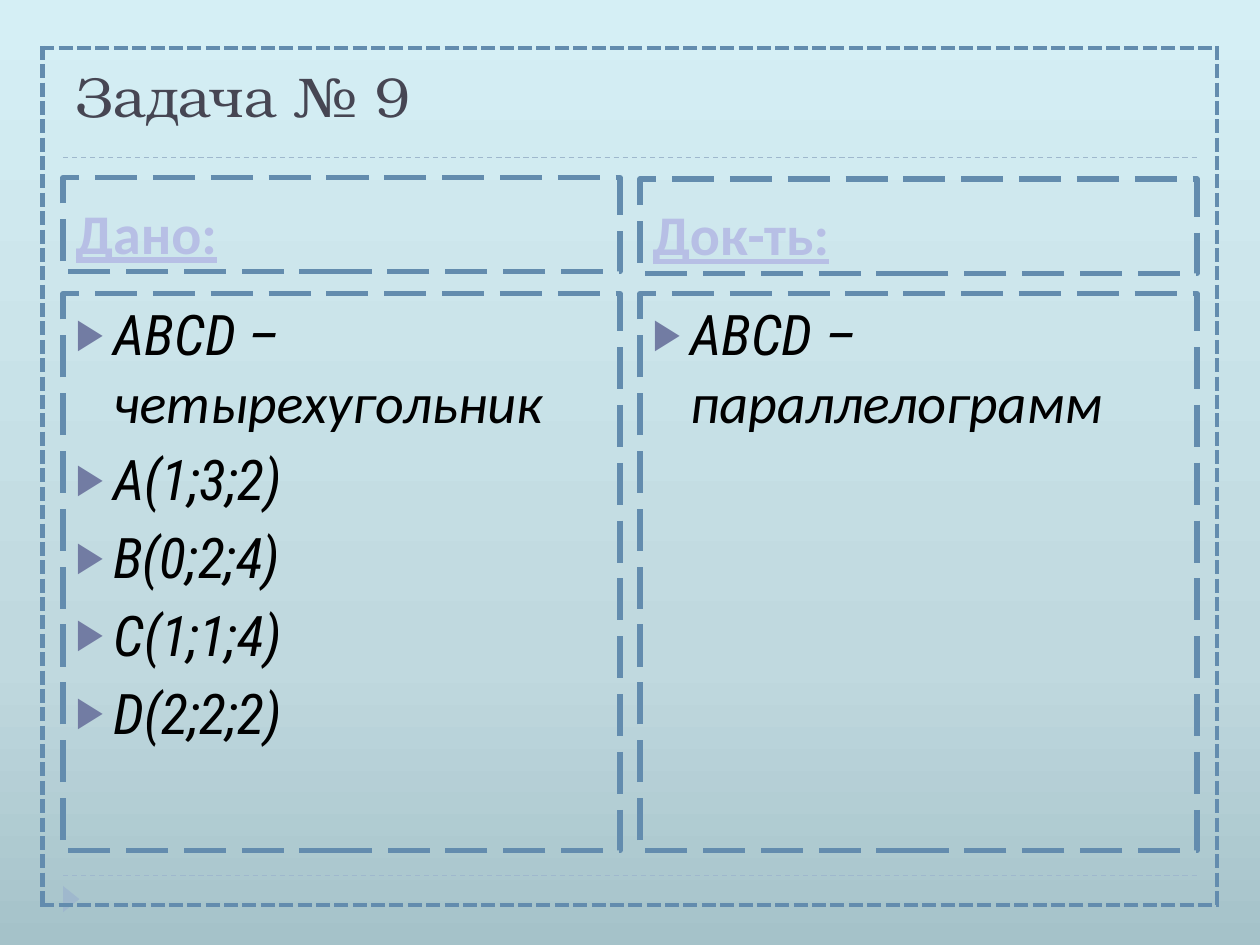
from lxml.etree import SubElement as Sub
from pptx import Presentation
from pptx.dml.color import RGBColor as RGB
from pptx.enum.dml import MSO_LINE as Dash
from pptx.enum.shapes import MSO_CONNECTOR as Conn, MSO_SHAPE as Kind
from pptx.enum.text import MSO_ANCHOR as Anchor, MSO_AUTO_SIZE as Auto, PP_ALIGN as Align
from pptx.oxml import parse_xml
from pptx.oxml.ns import nsdecls, qn
from pptx.util import Cm, Pt

BLUE = RGB(0x63, 0x8C, 0xAE)
PALE = RGB(0x9F, 0xB8, 0xCD)
DARK = RGB(0x46, 0x46, 0x53)
MIST = RGB(0xCD, 0xD2, 0xE8)
LILAC = RGB(0xB7, 0xBF, 0xE5)
NAVY = RGB(0x20, 0x2F, 0x69)
EDGE = RGB(0x6A, 0x74, 0x9D)
MARK = RGB(0x72, 0x7C, 0xA3)
BLACK = RGB(0, 0, 0)
SKY = [(0, RGB(0xA5, 0xC2, 0xC9)), (30, RGB(0xC0, 0xD9, 0xDF)),
       (100, RGB(0xD5, 0xEF, 0xF5))]
GLOW = [(0, MIST), (9, LILAC), (50, NAVY), (79, LILAC), (100, MIST)]
SERIF, SANS, SLIM = "TeX Gyre Bonum", "Calibri", "Roboto Condensed"
LEFT, WIDE, COL, STEP = 1.27, 22.86, 11.23, 11.63
GIVEN = [("ABCD – ", "четырехугольник"), ("A(1;3;2)", ""), ("B(0;2;4)", ""),
         ("C(1;1;4)", ""), ("D(2;2;2)", "")]
PROVE = [("ABCD – ", "параллелограмм")]


def blend(stops, angle):
    """Return the XML of a linear gradient fill."""
    parts = "".join(f'<a:gs pos="{pos * 1000}"><a:srgbClr val="{tint}"/></a:gs>'
                    for pos, tint in stops)
    return (f'<a:gradFill {nsdecls("a")} rotWithShape="1"><a:gsLst>{parts}</a:gsLst>'
            f'<a:lin ang="{angle * 60000}" scaled="0"/></a:gradFill>')


def paint(slide):
    """Give the slide its three-stop gradient, running upwards."""
    slide.element.cSld.insert(0, parse_xml(
        f'<p:bg {nsdecls("p", "a")}><p:bgPr>{blend(SKY, 270)}'
        '<a:effectLst/></p:bgPr></p:bg>'))


def rule(slide, left, top, width):
    """Draw a thin dashed line across the slide."""
    line = slide.shapes.add_connector(
        Conn.STRAIGHT, Cm(left), Cm(top), Cm(left + width), Cm(top))
    line.line.color.rgb = PALE
    line.line.width = Pt(0.75)
    line.line.dash_style = Dash.DASH
    Sub(line.element.spPr, qn("a:effectLst"))


def arrow(slide, left, top, width, height):
    """Place the small triangle that points right."""
    shape = slide.shapes.add_shape(
        Kind.ISOSCELES_TRIANGLE, Cm(left), Cm(top), Cm(width), Cm(height))
    shape.rotation = 90
    shape.shadow.inherit = False
    shape.fill.solid()
    shape.fill.fore_color.rgb = PALE
    shape.line.fill.background()


def frame(slide, *box):
    """Surround the content with a one-cell dashed table."""
    table = slide.shapes.add_table(1, 1, *map(Cm, box)).table
    table.first_row = table.horz_banding = False
    cell = table.cell(0, 0)
    props = cell._tc.get_or_add_tcPr()
    for side in ("lnL", "lnR", "lnT", "lnB"):
        props.append(parse_xml(
            f'<a:{side} {nsdecls("a")} w="38100"><a:solidFill><a:srgbClr val="{BLUE}"/>'
            f'</a:solidFill><a:prstDash val="dash"/></a:{side}>'))
    cell.fill.background()


def seat(slide, idx, box, anchor):
    """Move a placeholder to its box, in front, and return its text frame."""
    shape = slide.placeholders[idx]
    slide.shapes._spTree.append(shape.element)
    shape.left, shape.top, shape.width, shape.height = map(Cm, box)
    text = shape.text_frame
    text.word_wrap = True
    text.auto_size = Auto.NONE
    text.vertical_anchor = anchor
    if idx:
        shape.line.color.rgb = BLUE
        shape.line.width = Pt(3)
        shape.line.dash_style = Dash.LONG_DASH
    return text


def style(run, face, tint=None, slant=False):
    """Format one run of text."""
    font = run.font
    font.name, font.size = face, Pt(32)
    font.italic = slant
    if tint is not None:
        font.color.rgb = tint


def glow(run):
    """Make a run bold and underlined, with gradient fill and outline."""
    run.font.bold = run.font.underline = True
    props = run._r.get_or_add_rPr()
    props.insert(0, parse_xml(blend(GLOW, 90)))
    props.insert(0, parse_xml(
        f'<a:ln {nsdecls("a")} w="{Pt(0.83)}"><a:solidFill>'
        f'<a:srgbClr val="{EDGE}"/></a:solidFill></a:ln>'))


def title(slide, words, *box):
    """Set the slide title."""
    text = seat(slide, 0, box, Anchor.MIDDLE)
    text.text = words
    para = text.paragraphs[0]
    para.alignment = Align.LEFT
    style(para.runs[0], SERIF, DARK)


def head(slide, idx, words, *box):
    """Set the heading of one column."""
    text = seat(slide, idx, box, Anchor.BOTTOM)
    text.text = words
    para = text.paragraphs[0]
    para.space_before = Pt(0)
    style(para.runs[0], SANS)
    glow(para.runs[0])


def bullet(para):
    """Give a paragraph its hanging triangle bullet."""
    props = para._p.get_or_add_pPr()
    props.set("marL", str(Cm(0.76)))
    props.set("indent", str(Cm(-0.76)))
    Sub(Sub(props, qn("a:buClr")), qn("a:srgbClr"), val=str(MARK))
    Sub(props, qn("a:buSzPct"), val="76000")
    Sub(props, qn("a:buChar"), char="▶")


def items(slide, idx, rows, *box):
    """Fill one column with its bulleted list."""
    text = seat(slide, idx, box, Anchor.TOP)
    for num, (lead, tail) in enumerate(rows):
        para = text.add_paragraph() if num else text.paragraphs[0]
        para.text = lead
        bullet(para)
        para.space_before = Pt(6 if num else 0)
        style(para.runs[0], SLIM, BLACK, slant=True)
        if tail:
            run = para.add_run()
            run.text = tail
            style(run, SANS, BLACK, slant=True)


def main():
    """Build and save the slide."""
    deck = Presentation()
    deck.slide_width, deck.slide_height = Cm(25.4), Cm(19.05)
    slide = deck.slides.add_slide(deck.slide_layouts[4])
    paint(slide)
    for top in (17.65, 3.18):
        rule(slide, LEFT, top, WIDE)
    arrow(slide, 1.17, 17.96, 0.53, 0.33)
    frame(slide, 0.86, 0.97, 23.67, 17.27)
    title(slide, "Задача № 9", LEFT, 0.64, WIDE, 2.54)
    for num, (words, rows) in enumerate([("Дано:", GIVEN), ("Док-ть:", PROVE)]):
        left = LEFT + num * STEP
        head(slide, 1 + 2 * num, words, left, 3.58 + 0.03 * num, COL, 1.9)
        items(slide, 2 + 2 * num, rows, left, 5.92, COL, COL)
    deck.save("out.pptx")


if __name__ == "__main__":
    main()
